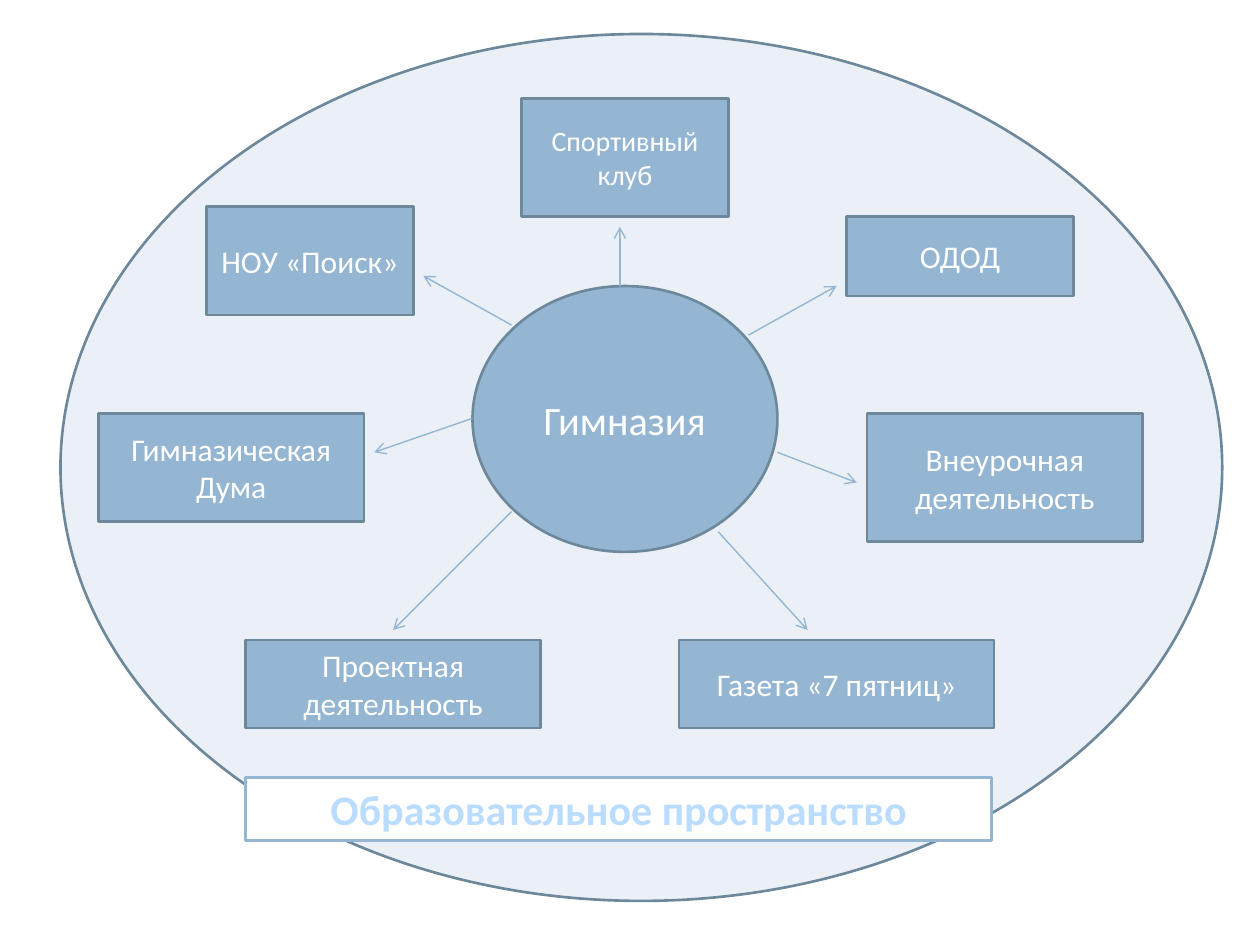
"""Build a slide showing the gymnasium and the circles around it."""
from lxml import etree
from pptx import Presentation
from pptx.dml.color import RGBColor
from pptx.enum.shapes import MSO_CONNECTOR, MSO_SHAPE
from pptx.enum.text import MSO_ANCHOR, MSO_AUTO_SIZE, PP_ALIGN
from pptx.oxml.ns import qn
from pptx.util import Pt

PX = 9144
OVAL, RECT = MSO_SHAPE.OVAL, MSO_SHAPE.RECTANGLE
LINE = MSO_CONNECTOR.STRAIGHT
MIDDLE, TOP = MSO_ANCHOR.MIDDLE, MSO_ANCHOR.TOP
CENTER = PP_ALIGN.CENTER
GROW = MSO_AUTO_SIZE.SHAPE_TO_FIT_TEXT

THEME = {
    "font": "Calibri",
    "pale": "EAF0F6", "blue": "94B6D2", "edge": "6D879B",
    "white": "FFFFFF", "sky": "BADDFF",
    "hub": 23, "unit": 18, "small": 16, "title": 24,
    "border": 1.5, "arrow": 0.79,
}

SIZE = (1000, 750)
SPACE = (48, 27, 922, 688)
HUB = ("Гимназия", (375, 227, 242, 211))
TITLE = ("Образовательное пространство", (195, 617, 592, 50))
UNITS = [
    ("ОДОД", (672, 172, 180, 63), "unit", (594, 266, 664, 227)),
    ("Внеурочная деятельность", (688, 328, 219, 102), "unit", (617, 359, 680, 383)),
    ("Газета «7 пятниц»", (539, 508, 250, 70), "unit", (570, 422, 641, 500)),
    ("Проектная деятельность", (195, 508, 234, 70), "unit", (406, 406, 312, 500)),
    ("Гимназическая Дума", (78, 328, 211, 86), "unit", (375, 332, 297, 359)),
    ("НОУ «Поиск»", (164, 164, 164, 86), "unit", (406, 258, 336, 219)),
    ("Спортивный клуб", (414, 78, 164, 94), "small", (492, 227, 492, 180)),
]


def tint(name):
    return RGBColor.from_string(THEME[name])


def scale(box):
    return [n * PX for n in box]


def add_form(slide, kind, box, fill, edge):
    form = slide.shapes.add_shape(kind, *scale(box))
    form.shadow.inherit = False
    form.fill.solid()
    form.fill.fore_color.rgb = tint(fill)
    form.line.color.rgb = tint(edge)
    form.line.width = Pt(THEME["border"])
    return form


def add_text(form, text, size, color="white", bold=False, anchor=MIDDLE):
    frame = form.text_frame
    frame.word_wrap = True
    frame.vertical_anchor = anchor
    par = frame.paragraphs[0]
    par.text = text
    par.alignment = CENTER
    par.font.name = THEME["font"]
    par.font.size = Pt(THEME[size])
    par.font.bold = bold
    par.font.color.rgb = tint(color)
    return frame


def add_arrow(slide, ends):
    arrow = slide.shapes.add_connector(LINE, *scale(ends))
    arrow.line.color.rgb = tint("blue")
    arrow.line.width = Pt(THEME["arrow"])
    etree.SubElement(arrow.line._get_or_add_ln(), qn("a:tailEnd"), type="arrow")
    etree.SubElement(arrow._element.spPr, qn("a:effectLst"))


def main():
    deck = Presentation()
    deck.slide_width, deck.slide_height = scale(SIZE)
    slide = deck.slides.add_slide(deck.slide_layouts[6])

    add_form(slide, OVAL, SPACE, "pale", "edge")
    text, box = HUB
    add_text(add_form(slide, OVAL, box, "blue", "edge"), text, "hub")
    for text, box, size, ends in UNITS:
        add_text(add_form(slide, RECT, box, "blue", "edge"), text, size)
        add_arrow(slide, ends)

    text, box = TITLE
    label = add_form(slide, RECT, box, "white", "blue")
    frame = add_text(label, text, "title", "sky", True, TOP)
    frame.word_wrap = False
    frame.auto_size = GROW
    deck.save("out.pptx")


if __name__ == "__main__":
    main()
